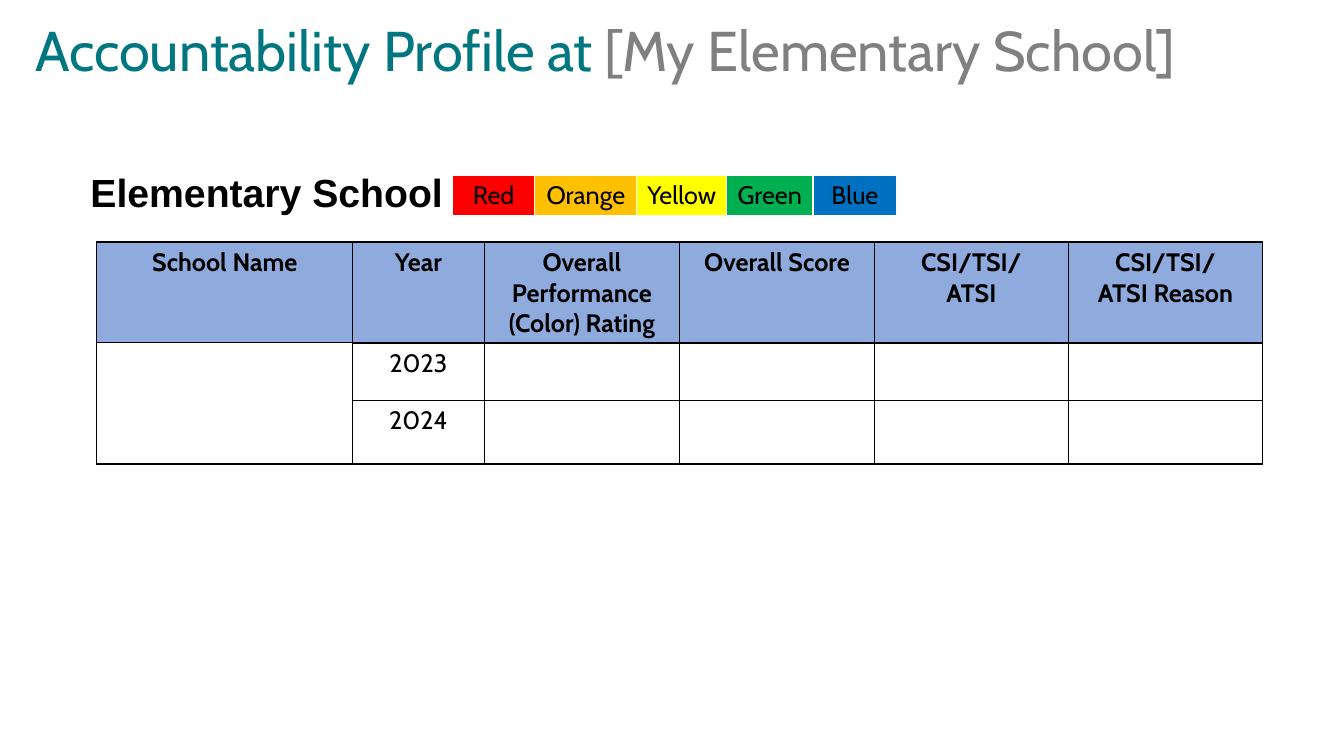
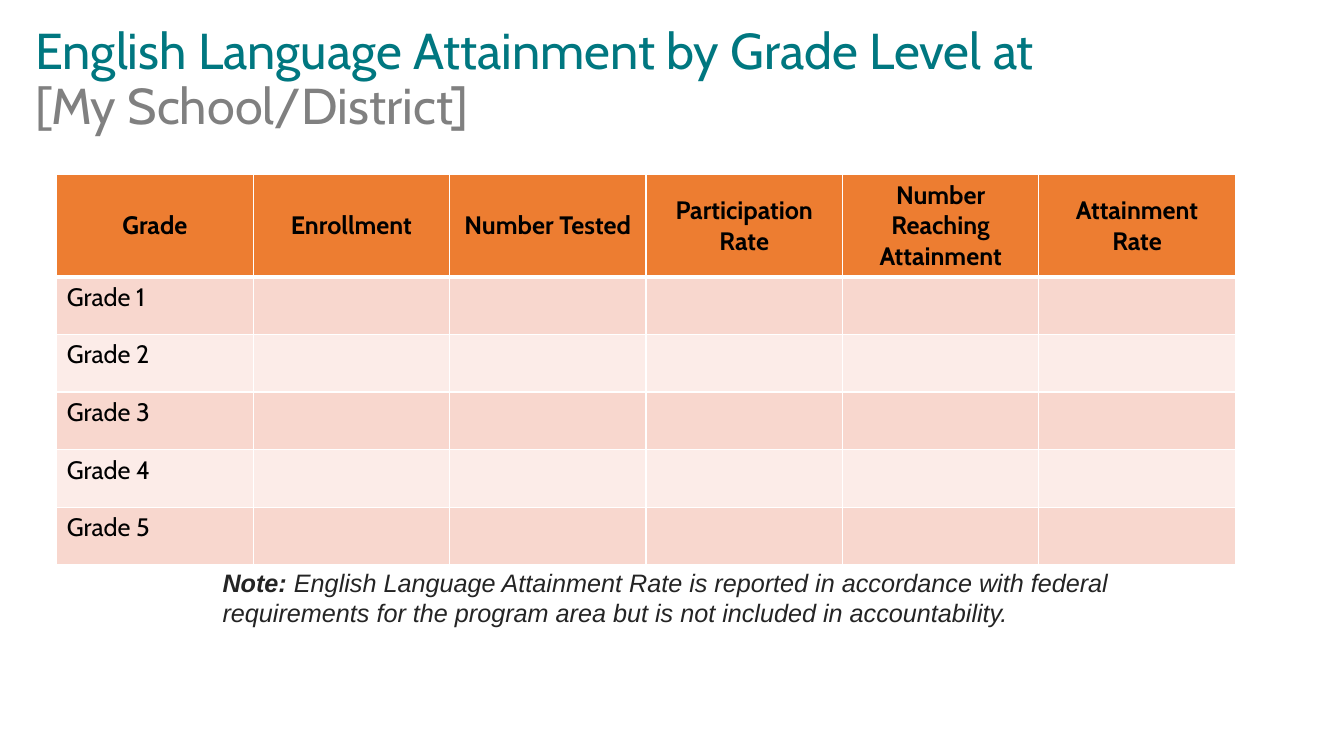
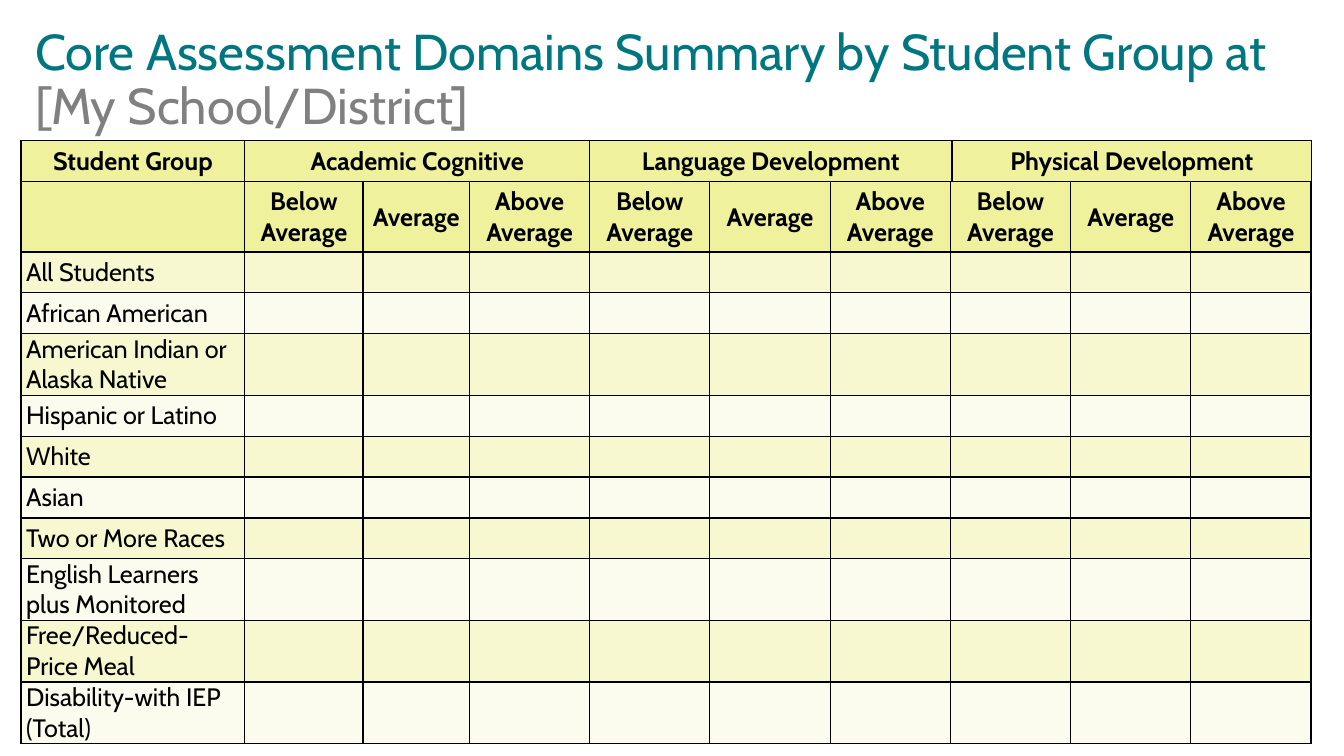
from copy import deepcopy

from lxml.etree import SubElement
from pptx import Presentation
from pptx.dml.color import RGBColor
from pptx.enum.text import MSO_ANCHOR, MSO_AUTO_SIZE, PP_ALIGN
from pptx.oxml.ns import qn
from pptx.util import Cm, Pt

BLACK = RGBColor(0x00, 0x00, 0x00)
WHITE = RGBColor(0xFF, 0xFF, 0xFF)
TEAL = RGBColor(0x00, 0x77, 0x80)
GRAY = RGBColor(0x80, 0x80, 0x80)
CHARCOAL = RGBColor(0x24, 0x24, 0x24)
PERIWINKLE = RGBColor(0x8F, 0xAA, 0xDC)
ORANGE = RGBColor(0xED, 0x7D, 0x31)
PEACH = RGBColor(0xF8, 0xD7, 0xCE)
PALE_PEACH = RGBColor(0xFC, 0xEC, 0xE8)
YELLOW = RGBColor(0xEF, 0xF1, 0x9D)
CREAM = RGBColor(0xF7, 0xF8, 0xD0)
PALE_CREAM = RGBColor(0xFC, 0xFC, 0xEE)
RATINGS = {
    "Red": RGBColor(0xFF, 0x00, 0x00),
    "Orange": RGBColor(0xFF, 0xC0, 0x00),
    "Yellow": RGBColor(0xFF, 0xFF, 0x00),
    "Green": RGBColor(0x00, 0xB0, 0x50),
    "Blue": RGBColor(0x00, 0x70, 0xC0),
}


class Deck:
    display_font = "Cabin"
    text_font = "Arial"
    table_size = 18

    def __init__(self):
        self.presentation = Presentation()
        self.presentation.slide_width = Cm(33.87)
        self.presentation.slide_height = Cm(19.05)
        self.slide = None

    def style(self, run, font, size, color, bold=False, italic=False):
        run.font.name = font
        run.font.size = Pt(size)
        run.font.color.rgb = color
        run.font.bold = bold
        run.font.italic = italic

    def new_slide(self, topic, place, width, height, size, line_break=False):
        self.slide = self.presentation.slides.add_slide(self.presentation.slide_layouts[5])
        title = self.slide.shapes.title
        title.left, title.top, title.width, title.height = 0, 0, Cm(width), Cm(height)
        frame = title.text_frame
        frame.word_wrap = True
        frame.auto_size = MSO_AUTO_SIZE.NONE
        frame.vertical_anchor = MSO_ANCHOR.MIDDLE
        frame.margin_left = Cm(0.89)
        heading = frame.paragraphs[0]
        heading.alignment = PP_ALIGN.LEFT
        heading.line_spacing = 0.9
        for words, color in ((topic, TEAL), (place, GRAY)):
            run = heading.add_run()
            run.text = words
            self.style(run, self.display_font, size, color)
            if line_break and words == topic:
                heading.add_line_break()
                heading._p[-1].append(deepcopy(run.font._element))

    def text(self, left, top, width, height, parts, size, color, italic=False):
        frame = self.slide.shapes.add_textbox(Cm(left), Cm(top), Cm(width), Cm(height)).text_frame
        frame.word_wrap = True
        for words, bold in parts:
            run = frame.paragraphs[0].add_run()
            run.text = words
            self.style(run, self.text_font, size, color, bold, italic)

    def border(self, cell, color, bottom_width):
        properties = cell._tc.get_or_add_tcPr()
        for side, width in (("L", 1), ("R", 1), ("T", 1), ("B", bottom_width)):
            line = SubElement(properties, qn("a:ln" + side), w=str(Pt(width)))
            SubElement(SubElement(line, qn("a:solidFill")), qn("a:srgbClr"), val=str(color))

    def table(self, left, top, widths, heights, texts, fills, line=BLACK, head_bottom=1,
              head_bold=True, centered=False, head_anchor=None, body_anchor=None,
              head_margins=None, body_margins=None):
        grid = self.slide.shapes.add_table(
            len(heights), len(widths), Cm(left), Cm(top), Cm(sum(widths)), Cm(sum(heights))).table
        grid.first_row = grid.horz_banding = False
        for column, width in zip(grid.columns, widths):
            column.width = Cm(width)
        for row, height in zip(grid.rows, heights):
            row.height = Cm(height)
        for r, row in enumerate(grid.rows):
            head = r == 0
            anchor = head_anchor if head else body_anchor
            margins = head_margins if head else body_margins
            for c, cell in enumerate(row.cells):
                self.border(cell, line, head_bottom if head else 1)
                cell.fill.solid()
                cell.fill.fore_color.rgb = fills[r]
                if c >= len(texts[r]) or not texts[r][c]:
                    continue
                cell.text = texts[r][c]
                if anchor is not None:
                    cell.vertical_anchor = anchor
                if margins:
                    cell.margin_left = cell.margin_right = Cm(margins[0])
                    cell.margin_top, cell.margin_bottom = Cm(margins[1]), 0
                for paragraph in cell.text_frame.paragraphs:
                    paragraph.alignment = PP_ALIGN.CENTER if head or centered else PP_ALIGN.LEFT
                    for run in paragraph.runs:
                        self.style(run, self.display_font, self.table_size, BLACK, head and head_bold)
        return grid


def accountability(deck):
    deck.new_slide("Accountability Profile at ", "[My Elementary School]", 32, 2.67, 40)
    deck.text(2.03, 4.11, 9.42, 1.45, [("Elementary School", True)], 28, BLACK)
    legend = deck.table(11.4, 4.42, [2.08, 2.57, 2.26, 2.18, 2.11], [1.04], [list(RATINGS)],
                        [WHITE], line=WHITE, head_bottom=3, head_bold=False)
    for cell, color in zip(legend.rows[0].cells, RATINGS.values()):
        cell.fill.fore_color.rgb = color
    deck.table(2.44, 6.1, [6.45], [2.54, 3.05], [["School Name"], []], [PERIWINKLE, WHITE])
    headings = ["Year", "Overall Performance (Color) Rating", "Overall Score",
                "CSI/TSI/\nATSI", "CSI/TSI/\nATSI Reason"]
    deck.table(8.89, 6.1, [3.31, 4.93, 4.9, 4.9, 4.88], [2.54, 1.45, 1.6],
               [headings, ["2023"], ["2024"]], [PERIWINKLE, WHITE, WHITE], centered=True)


def attainment(deck):
    deck.new_slide("English Language Attainment by Grade Level at ", "[My School/District]",
                   33.87, 4.06, 36, line_break=True)
    headings = ["Grade", "Enrollment", "Number Tested", "Participation Rate",
                "Number Reaching Attainment", "Attainment Rate"]
    grades = [[f"Grade {grade}"] for grade in range(1, 6)]
    deck.table(1.43, 4.4, [4.95] * 6, [2.5] + [1.45] * 5, [headings] + grades,
               [ORANGE] + [PEACH, PALE_PEACH] * 2 + [PEACH],
               line=WHITE, head_bottom=3, head_anchor=MSO_ANCHOR.MIDDLE)
    deck.text(5.36, 14.17, 24.74, 1.8,
              [("Note: ", True),
               ("English Language Attainment Rate is reported in accordance with federal "
                "requirements for the program area but is not included in accountability.", False)],
              18, CHARCOAL, italic=True)


def domains(deck):
    deck.new_slide("Core Assessment Domains Summary by Student Group at ", "[My School/District]",
                   32.31, 4.09, 36)
    levels = ["Below Average", "Average", "Above Average"]
    groups = ["All Students", "African American", "American Indian or Alaska Native",
              "Hispanic or Latino", "White", "Asian", "Two or More Races",
              "English Learners plus Monitored", "Free/Reduced-Price Meal",
              "Disability-with IEP (Total)"]
    single, double = 1.03, 1.55
    two_line = {2, 7, 8, 9}
    heights = [1.78] + [double if i in two_line else single for i in range(len(groups))]
    deck.table(0.53, 4.57, [5.64, 2.98, 2.68] + [3.03] * 7, heights,
               [[""] + levels * 3] + [[group] for group in groups],
               [YELLOW] + [CREAM, PALE_CREAM] * 5,
               head_anchor=MSO_ANCHOR.MIDDLE, body_anchor=MSO_ANCHOR.MIDDLE,
               head_margins=(0.03, 0.03), body_margins=(0.13, 0))
    deck.table(0.53, 3.55, [5.64, 8.69, 9.13, 9.07], [1.03],
               [["Student Group", "Academic Cognitive", "Language Development",
                 "Physical Development"]], [YELLOW])


def main():
    deck = Deck()
    accountability(deck)
    attainment(deck)
    domains(deck)
    deck.presentation.save("out.pptx")


if __name__ == "__main__":
    main()
